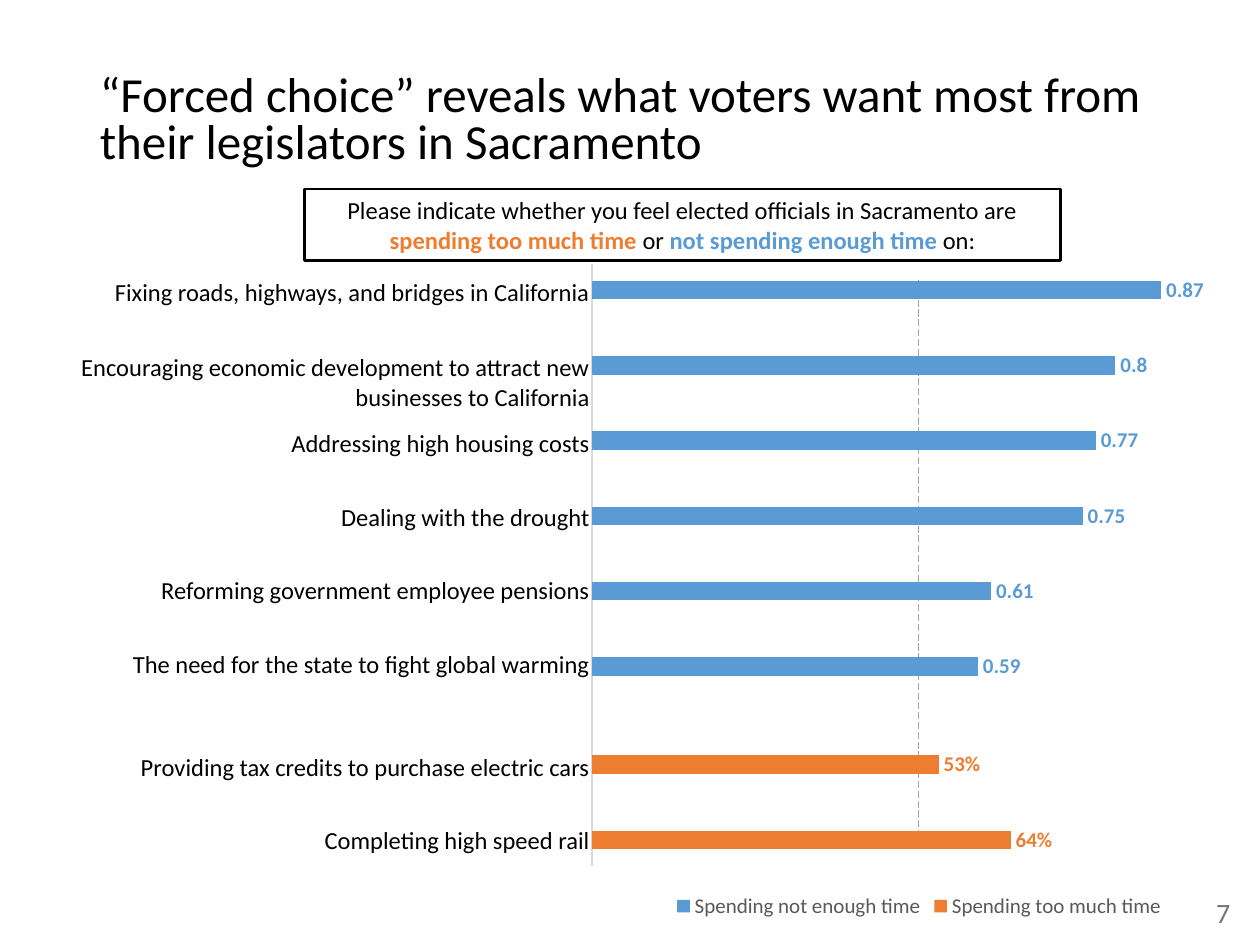
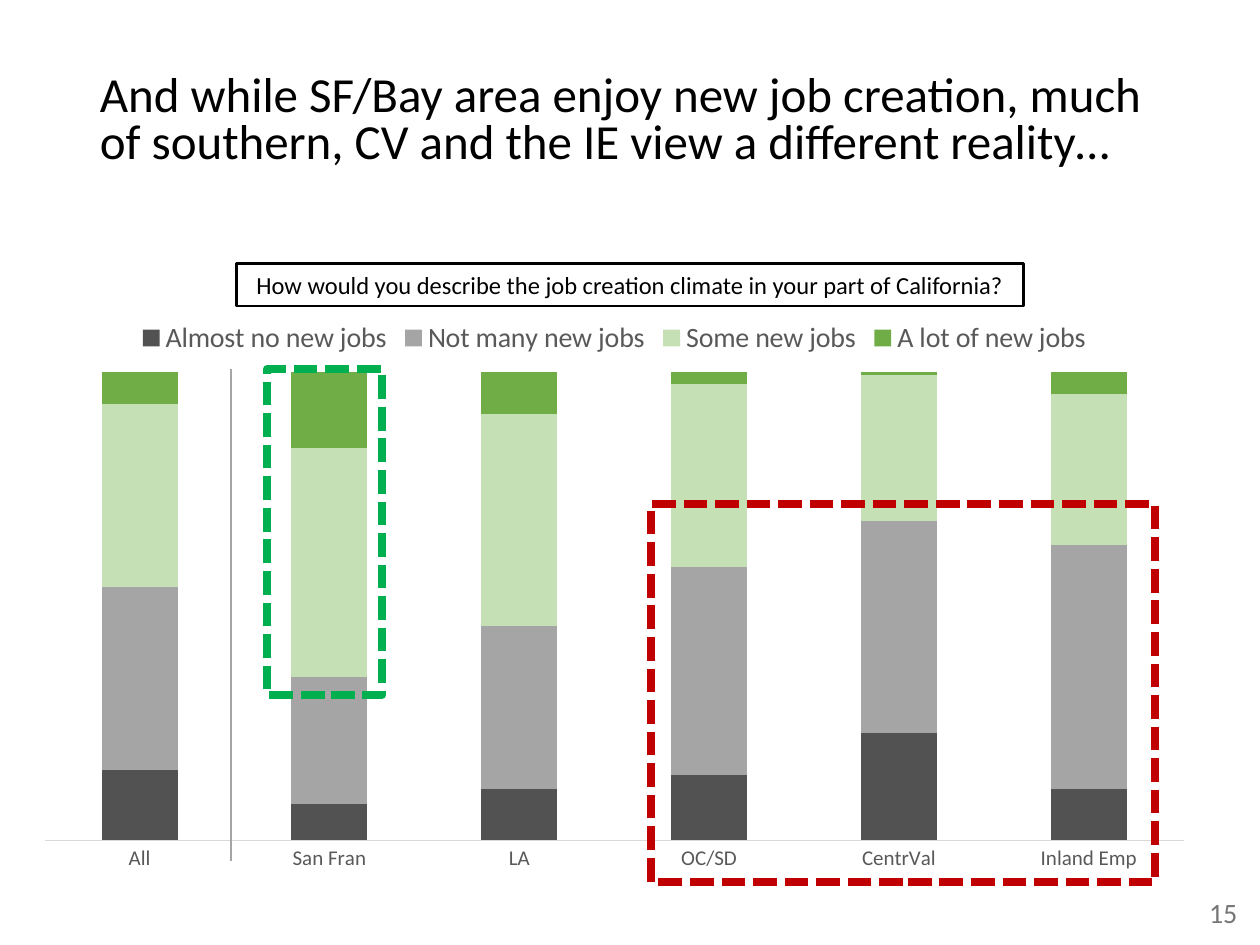
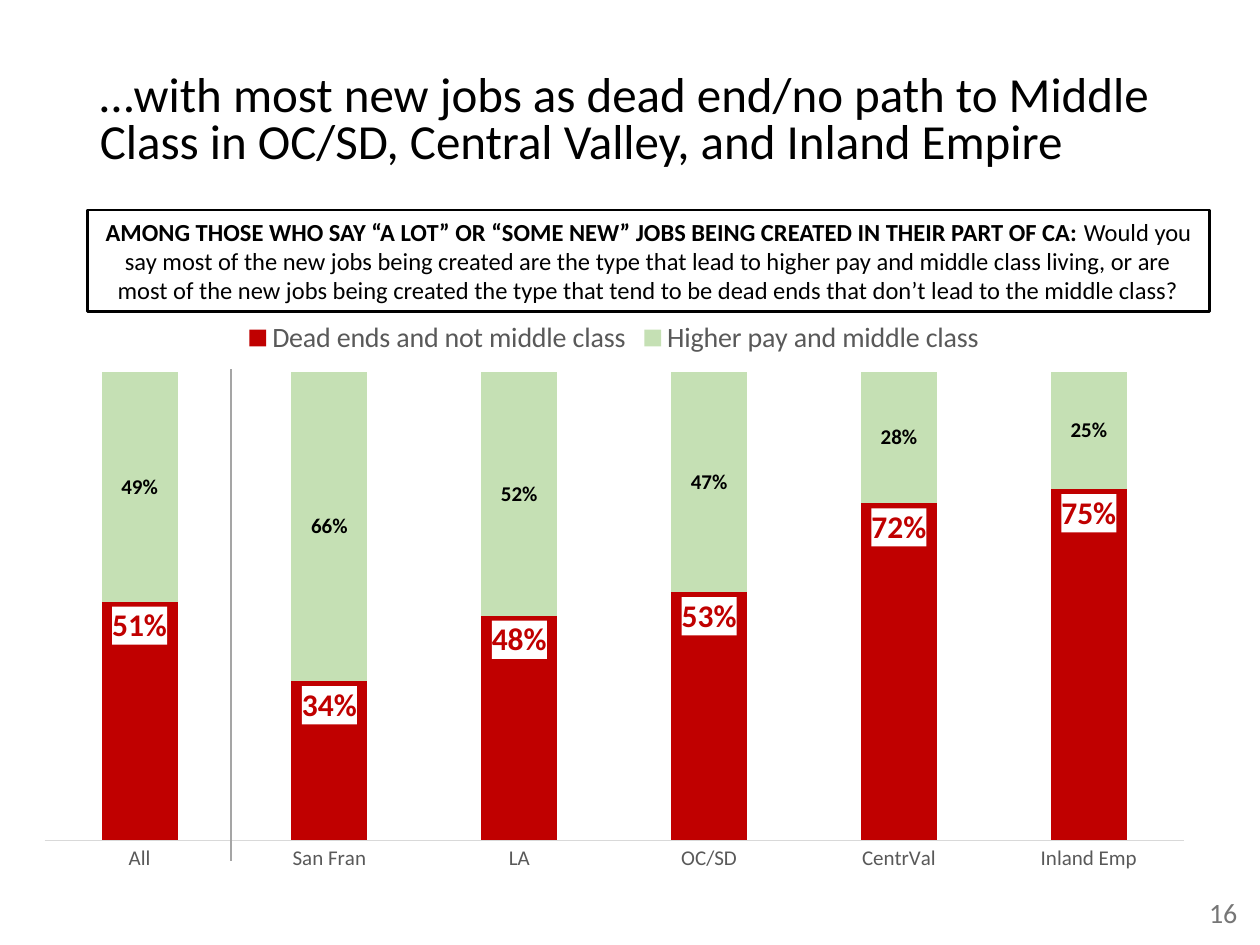
from lxml import etree
from pptx import Presentation
from pptx.chart.data import CategoryChartData
from pptx.dml.color import RGBColor
from pptx.enum.chart import (XL_CHART_TYPE, XL_LABEL_POSITION, XL_LEGEND_POSITION,
                             XL_TICK_LABEL_POSITION, XL_TICK_MARK)
from pptx.enum.dml import MSO_LINE
from pptx.enum.shapes import MSO_CONNECTOR, MSO_SHAPE
from pptx.enum.text import MSO_ANCHOR, PP_ALIGN
from pptx.oxml.ns import qn
from pptx.util import Pt

BAR, COLUMN = XL_CHART_TYPE.BAR_CLUSTERED, XL_CHART_TYPE.COLUMN_STACKED
LEGEND_TOP, LEGEND_BOTTOM = XL_LEGEND_POSITION.TOP, XL_LEGEND_POSITION.BOTTOM
OUTSIDE_END, INSIDE_END, CENTRED = (XL_LABEL_POSITION.OUTSIDE_END,
                                    XL_LABEL_POSITION.INSIDE_END, XL_LABEL_POSITION.CENTER)
NO_TICK, NO_LABELS = XL_TICK_MARK.NONE, XL_TICK_LABEL_POSITION.NONE
LONG_DASH, SQUARE_DOT = MSO_LINE.LONG_DASH, MSO_LINE.SQUARE_DOT
STRAIGHT, RECTANGLE = MSO_CONNECTOR.STRAIGHT, MSO_SHAPE.RECTANGLE
MIDDLE = MSO_ANCHOR.MIDDLE
LEFT, CENTER, RIGHT = PP_ALIGN.LEFT, PP_ALIGN.CENTER, PP_ALIGN.RIGHT

FONT = "Calibri"
BLACK, WHITE = "000000", "FFFFFF"
ORANGE, BLUE = "ED7D31", "5B9BD5"
RED, GREEN, LEAF, PALE_GREEN = "C00000", "00B050", "70AD47", "C5E0B4"
CHARCOAL, GREY, AXIS_GREY = "525252", "A5A5A5", "D9D9D9"
LEGEND_TEXT, PAGE_TEXT = "595959", "767676"
NO_STYLE = "{2D5ABB26-0587-4C30-8999-92F81FD0307C}"

# Boxes are left, top, width, height in points
TITLE_BOX = (50, 30, 621, 79)
WIDE_TITLE_BOX = (50, 30, 670, 79)
PAGE_BOX = (678, 508, 42, 27)
REGION_CHART_BOX = (12, 175, 678, 329)
REGIONS = ["All", "San Fran", "LA", "OC/SD", "CentrVal", "Inland Emp"]

TEXT_LINE = 17
# Each issue with the empty space above and below its label
ISSUES = [
    ("Fixing roads, highways, and bridges in California", 0, TEXT_LINE),
    ("Encouraging economic development to attract new businesses to California", 0, 0),
    ("Addressing high housing costs", 0, TEXT_LINE),
    ("Dealing with the drought", 0, TEXT_LINE),
    ("Reforming government employee pensions", 0, TEXT_LINE),
    ("The need for the state to fight global warming", 0, TEXT_LINE),
    ("Providing tax credits to purchase electric cars", TEXT_LINE, 0),
    ("Completing high speed rail", TEXT_LINE, 0),
]


def color(value):
    return RGBColor.from_string(value)


def points(*lengths):
    return [Pt(length) for length in lengths]


def style_font(font, size, ink, bold=False):
    font.name, font.size, font.bold = FONT, Pt(size), bold
    font.color.rgb = color(ink)


def write(frame, runs, size, align):
    """Fill one paragraph with (text, colour, bold) runs."""
    frame.word_wrap = True
    frame.vertical_anchor = MIDDLE
    paragraph = frame.paragraphs[0]
    paragraph.alignment = align
    for text, ink, bold in runs:
        run = paragraph.add_run()
        run.text = text
        style_font(run.font, size, ink, bold)
    return paragraph


def add_box(slide, box, line, width, fill=None, dash=None):
    shape = slide.shapes.add_shape(RECTANGLE, *points(*box))
    shape.shadow.inherit = False
    if fill:
        shape.fill.solid()
        shape.fill.fore_color.rgb = color(fill)
    else:
        shape.fill.background()
    shape.line.color.rgb = color(line)
    shape.line.width = Pt(width)
    if dash:
        shape.line.dash_style = dash
    return shape


def add_rule(slide, ends, width, dash=None):
    rule = slide.shapes.add_connector(STRAIGHT, *points(*ends))
    rule.line.color.rgb = color(GREY)
    rule.line.width = Pt(width)
    if dash:
        rule.line.dash_style = dash
    etree.SubElement(rule.element.spPr, qn("a:effectLst"))


def add_heading(slide, title, page, box=TITLE_BOX):
    """Title and page number, shared by every slide."""
    heading = slide.shapes.add_textbox(*points(*box))
    write(heading.text_frame, [(title, BLACK, False)], 28, LEFT).line_spacing = 0.8
    number = slide.shapes.add_textbox(*points(*PAGE_BOX))
    write(number.text_frame, [(str(page), PAGE_TEXT, False)], 16, CENTER)


def add_question(slide, box, runs):
    question = add_box(slide, box, BLACK, 1.5, WHITE)
    write(question.text_frame, runs, 14, CENTER)


def add_issue_table(slide, box):
    """Issue labels on the left; the right column stays clear for the bars."""
    table = slide.shapes.add_table(len(ISSUES), 2, *points(*box)).table
    table.first_row = table.horz_banding = False
    table._tbl.tblPr.find(qn("a:tableStyleId")).text = NO_STYLE
    table.columns[0].width, table.columns[1].width = points(330, box[2] - 330)
    for index, (issue, above, below) in enumerate(ISSUES):
        table.rows[index].height = Pt(44.6 if index == 1 else 42)
        label, clear = table.cell(index, 0), table.cell(index, 1)
        clear.fill.background()
        label.fill.solid()
        label.fill.fore_color.rgb = color(WHITE)
        label.margin_left = label.margin_right = Pt(5)
        label.margin_top, label.margin_bottom = points(above, below)
        label.vertical_anchor = MIDDLE
        write(label.text_frame, [(issue, BLACK, False)], 14, RIGHT)
        label.vertical_anchor = MIDDLE


def shape_properties(fill=None):
    """A c:spPr with the given fill, or none, and no outline."""
    properties = etree.Element(qn("c:spPr"))
    if fill:
        solid = etree.SubElement(properties, qn("a:solidFill"))
        etree.SubElement(solid, qn("a:srgbClr")).set("val", fill)
    else:
        etree.SubElement(properties, qn("a:noFill"))
    etree.SubElement(etree.SubElement(properties, qn("a:ln")), qn("a:noFill"))
    return properties


def add_bars(slide, box, kind, categories, series, maximum, gap, overlap,
             legend_place, legend_size):
    """Series are (name, values, colour) tuples."""
    data = CategoryChartData()
    data.categories = categories
    for name, values, _ in series:
        data.add_series(name, values)
    chart = slide.shapes.add_chart(kind, *points(*box), data).chart
    chart.has_title = False
    style_font(chart.font, 10, BLACK)
    chart.element.find(qn("c:chart")).addnext(shape_properties())

    # Axes
    value_axis, category_axis = chart.value_axis, chart.category_axis
    value_axis.minimum_scale, value_axis.maximum_scale = 0, maximum
    value_axis.has_major_gridlines = False
    value_axis.visible = False
    category_axis.major_tick_mark = category_axis.minor_tick_mark = NO_TICK
    category_axis.format.line.color.rgb = color(AXIS_GREY)
    category_axis.format.line.width = Pt(0.75)
    style_font(category_axis.tick_labels.font, 12, LEGEND_TEXT)

    # Legend
    chart.has_legend = True
    chart.legend.position = legend_place
    chart.legend.include_in_layout = False
    style_font(chart.legend.font, legend_size, LEGEND_TEXT)

    # Bars
    plot = chart.plots[0]
    plot.gap_width, plot.overlap, plot.vary_by_categories = gap, overlap, False
    for bars, (_, _, fill) in zip(plot.series, series):
        bars.invert_if_negative = False
        bars.format.fill.solid()
        bars.format.fill.fore_color.rgb = color(fill)
    return chart


def label_bars(bars, place, size, ink, number_format="0%", back=None):
    labels = bars.data_labels
    labels.show_value = True
    labels.number_format = number_format
    labels.number_format_is_linked = False
    labels.position = place
    style_font(labels.font, size, ink, True)
    if back:
        number = bars._element.find(qn("c:dLbls")).find(qn("c:numFmt"))
        number.addnext(shape_properties(back))


def add_region_chart(slide, box, series, maximum):
    """Stacked columns by region, with a divider after the statewide column."""
    chart = add_bars(slide, box, COLUMN, REGIONS, series, maximum, 150, 100, LEGEND_TOP, 16)
    left, top = box[:2]
    add_rule(slide, (left + 120, top + 36, left + 120, top + 317), 1.5)
    return chart


def build_priorities(slide):
    add_rule(slide, (525, 484, 525, 160), 0.5, LONG_DASH)
    add_issue_table(slide, (12, 154.8, 678, 338.6))
    add_heading(slide, "“Forced choice” reveals what voters want most from "
                       "their legislators in Sacramento", 7)
    series = [
        ("Spending too much time", [0.64, 0.53] + [None] * 6, ORANGE),
        ("Spending not enough time",
         [None, None, 0.59, 0.61, 0.75, 0.77, 0.8, 0.87], BLUE),
    ]
    chart = add_bars(slide, (330.5, 143.3, 389.5, 384.5), BAR, list("12345678"), series,
                     1, 182, -25, LEGEND_BOTTOM, 12)
    chart.category_axis.tick_label_position = NO_LABELS
    too_much, not_enough = chart.plots[0].series
    label_bars(too_much, OUTSIDE_END, 12, ORANGE)
    label_bars(not_enough, OUTSIDE_END, 12, BLUE, "General")
    add_question(slide, (174, 108, 432, 41), [
        ("Please indicate whether you feel elected officials in Sacramento are ", BLACK, False),
        ("spending too much time ", ORANGE, True),
        ("or ", BLACK, False),
        ("not spending enough time ", BLUE, True),
        ("on:", BLACK, False),
    ])


def build_job_creation(slide):
    add_heading(slide, "And while SF/Bay area enjoy new job creation, much of southern, "
                       "CV and the IE view a different reality…", 15)
    add_region_chart(slide, REGION_CHART_BOX, [
        ("Almost no new jobs", [29, 15, 21, 27, 44, 21], CHARCOAL),
        ("Not many new jobs", [75, 52, 67, 85, 87, 100], GREY),
        ("Some new jobs", [75, 94, 87, 75, 60, 62], PALE_GREEN),
        ("A lot of new jobs", [13, 31, 17, 8, 4, 10], LEAF),
    ], 192)
    add_question(slide, (135, 150.5, 450, 24.5), [
        ("How would you describe the job creation climate in your part of California?",
         BLACK, False)])
    # Highlights around the growing and the lagging regions
    left, top = REGION_CHART_BOX[:2]
    add_box(slide, (left + 140.5, top + 36, 66, 186), GREEN, 4.5, dash=SQUARE_DOT)
    add_box(slide, (left + 360, top + 113, 288, 216), RED, 4.5, dash=SQUARE_DOT)


def build_job_quality(slide):
    add_heading(slide, "…with most new jobs as dead end/no path to Middle Class in OC/SD, "
                       "Central Valley, and Inland Empire", 16, WIDE_TITLE_BOX)
    chart = add_region_chart(slide, REGION_CHART_BOX, [
        ("Dead ends and not middle class", [0.51, 0.34, 0.48, 0.53, 0.72, 0.75], RED),
        ("Higher pay and middle class", [0.49, 0.66, 0.52, 0.47, 0.28, 0.25], PALE_GREEN),
    ], 1)
    dead_ends, higher_pay = chart.plots[0].series
    label_bars(dead_ends, INSIDE_END, 18, RED, back=WHITE)
    label_bars(higher_pay, CENTRED, 12, BLACK)
    add_question(slide, (50, 120, 641, 58), [
        ("AMONG THOSE WHO SAY “A LOT” OR “SOME NEW” JOBS BEING CREATED IN THEIR PART OF CA: ",
         BLACK, True),
        ("Would you say most of the new jobs being created are the type that lead to higher pay "
         "and middle class living, or are most of the new jobs being created the type that tend "
         "to be dead ends that don’t lead to the middle class?", BLACK, False),
    ])


def main():
    deck = Presentation()
    deck.slide_width, deck.slide_height = points(720, 540)
    for build in (build_priorities, build_job_creation, build_job_quality):
        build(deck.slides.add_slide(deck.slide_layouts[6]))
    deck.save("out.pptx")


if __name__ == "__main__":
    main()
